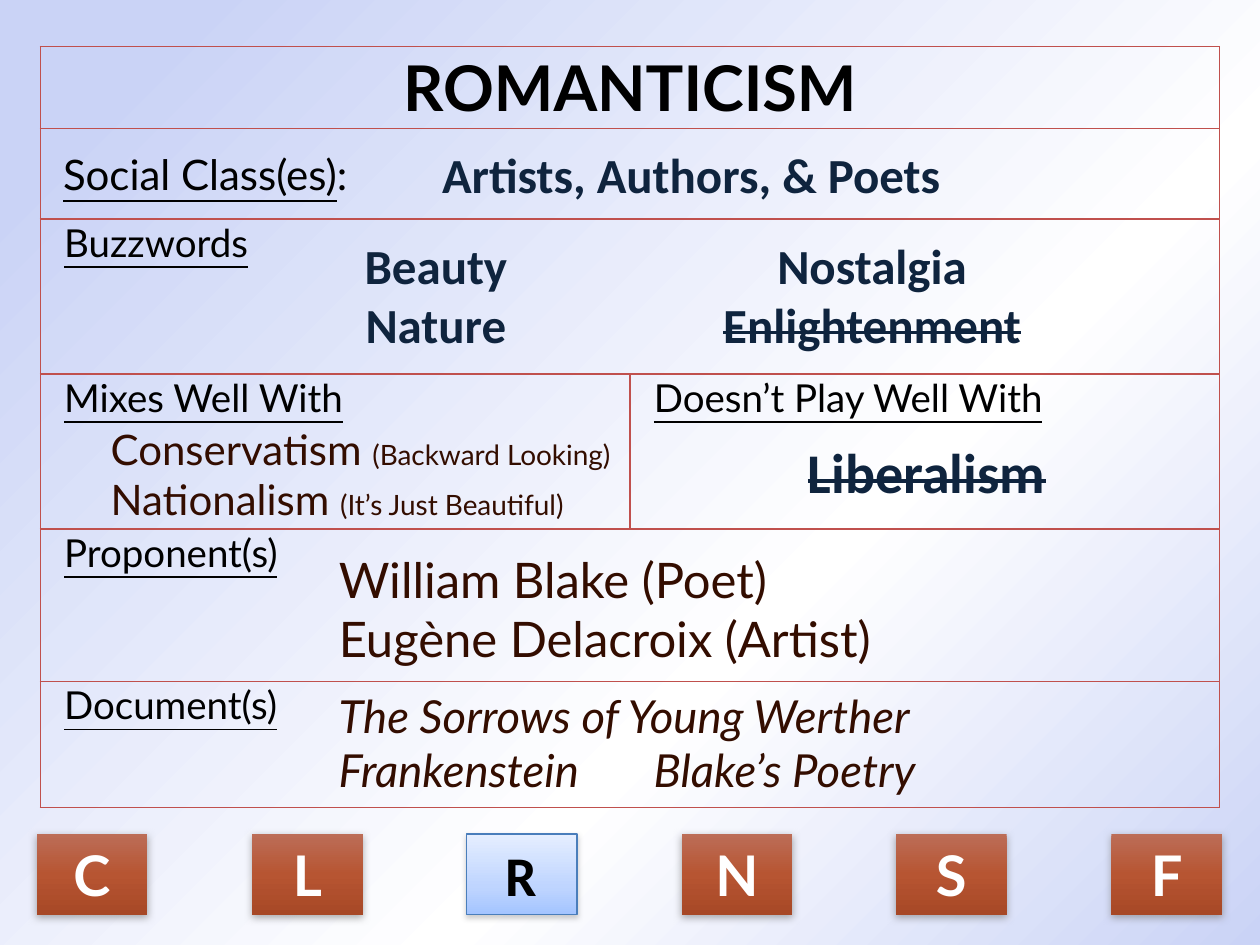
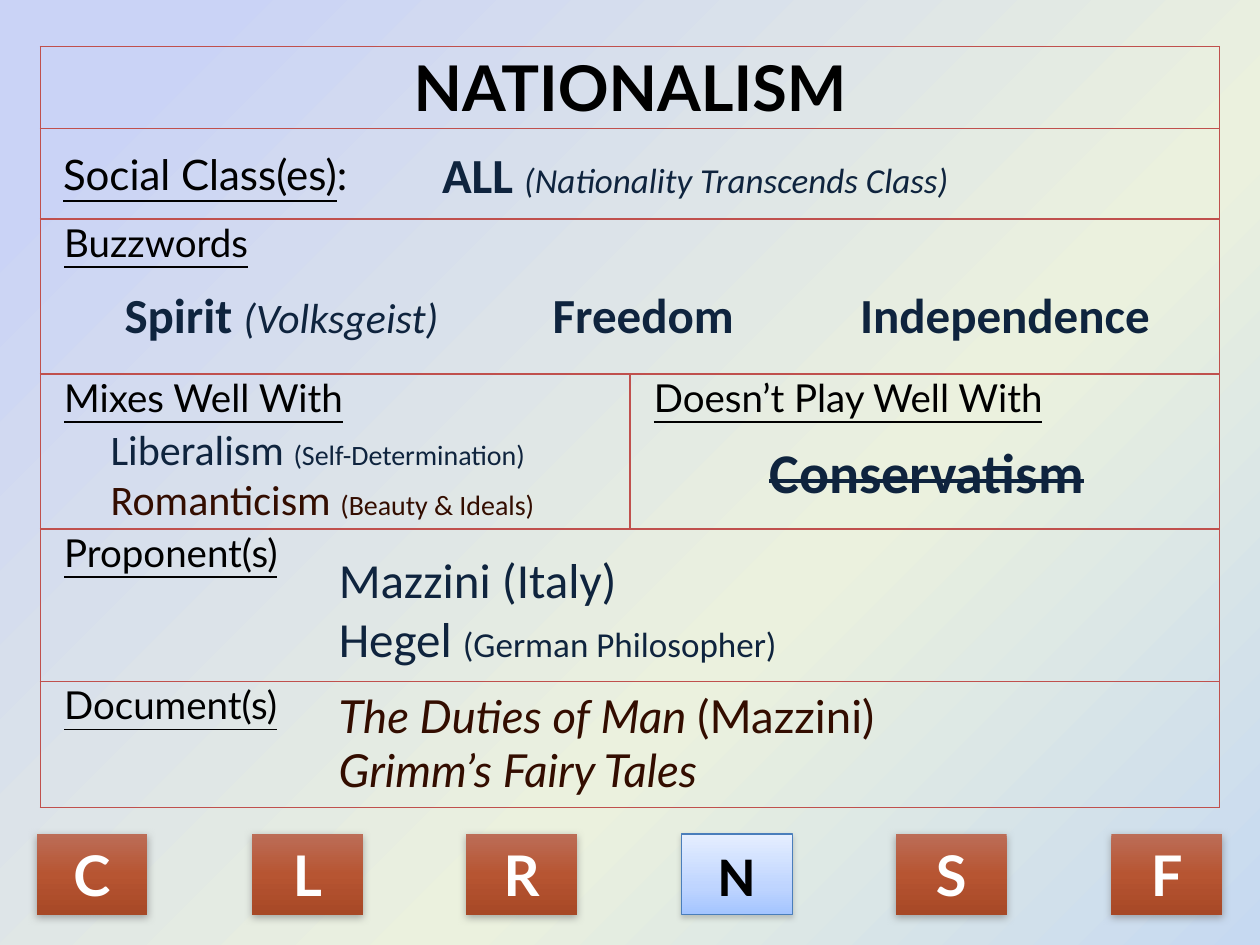
from dataclasses import dataclass, replace
from itertools import accumulate

from lxml import etree
from pptx import Presentation
from pptx.dml.color import RGBColor
from pptx.enum import shapes, text
from pptx.oxml import ns
from pptx.util import Inches, Pt


@dataclass(frozen=True)
class Style:
    size: int
    font: str = "Calibri"
    color: str = "0F243E"
    bold: bool = False
    italic: bool = False
    underline: bool = False
    strike: bool = False


@dataclass(frozen=True)
class Box:
    left: float
    top: float
    width: float
    height: float

    def inner(self, dx, dy, width, height):
        return Box(self.left + dx, self.top + dy, width, height)

    def emu(self):
        return [Inches(round(value, 2))
                for value in (self.left, self.top, self.width, self.height)]


@dataclass(frozen=True)
class ButtonLook:
    stops: tuple
    shadow: tuple  # opacity %, blur pt, distance pt
    label: Style
    line: str = ""


class Theme:
    border = "C0504D"
    shadow = "808080"
    # Labels inside the table
    title = Style(36, "Lato", "000000", bold=True)
    class_label = Style(24, "Lato", "000000", underline=True)
    class_colon = replace(class_label, underline=False)
    label = replace(class_label, size=22)
    # Answers in navy
    key = Style(28, bold=True)
    struck_key = replace(key, strike=True)
    opponent = replace(struck_key, size=32)
    navy = Style(28)
    navy_ally = Style(24)
    navy_ally_note = Style(16)
    navy_note = Style(20)
    navy_aside = Style(20, italic=True)
    key_aside = Style(24, italic=True)
    # Answers in brown
    brown = Style(28, "Lato", "330D00")
    brown_ally = replace(brown, size=24)
    brown_ally_note = replace(brown, size=16)
    work_author = replace(brown, size=26)
    work = replace(work_author, italic=True)
    # Navigation buttons
    button = ButtonLook(((0, "BC6D57"), (50, "B75532"), (100, "A74826")),
                        (63, 4.5, 1.5), Style(32, "Lato", "FFFFFF", bold=True))
    current_button = ButtonLook(((0, "E5EEFF"), (65, "BFD5FF"), (100, "A3C4FF")),
                                (38, 3.1, 1.6), Style(32, color="000000", bold=True),
                                "4A7EBB")


CARD = Box(0.32, 0.37, 9.36, 6.04)
ROW_HEIGHTS = (0.65, 0.72, 1.23, 1.23, 1.21, 1)
ROW_TOPS = (0, *accumulate(ROW_HEIGHTS))
TITLE, CLASSES, BUZZWORDS, RELATIONS, PROPONENTS, DOCUMENTS = range(6)
BUTTON_BAR = Box(0.29, 6.62, 9.41, 0.64)
BUTTON_WIDTH = 0.88
MOVEMENTS = "CLRNSF"


@dataclass(frozen=True)
class Movement:
    title: str
    letter: str
    background: tuple
    classes: list
    buzzwords: list
    buzzword_columns: int
    buzzword_box: Box  # relative to the buzzwords row
    allies: list
    opponent: str
    proponents: list
    documents: list


# Shared helpers
def add_element(parent, tag, **attributes):
    return etree.SubElement(parent, ns.qn(tag), {k: str(v) for k, v in attributes.items()})


def set_gradient(fill, owner, stops, angle):
    fill.gradient()
    gradient = owner.find(".//" + ns.qn("a:gradFill"))
    stop_list = gradient.find(ns.qn("a:gsLst"))
    for stop in list(stop_list):
        stop_list.remove(stop)
    for position, color in stops:
        stop = add_element(stop_list, "a:gs", pos=position * 1000)
        add_element(stop, "a:srgbClr", val=color)
    gradient.find(ns.qn("a:lin")).set("ang", str(angle * 60000))


def add_runs(paragraph, runs):
    for content, style in runs:
        run = paragraph.add_run()
        run.text = content
        font = run.font
        font.size, font.name = Pt(style.size), style.font
        font.color.rgb = RGBColor.from_string(style.color)
        font.bold, font.italic, font.underline = style.bold, style.italic, style.underline
        if style.strike:
            run._r.get_or_add_rPr().set("strike", "sngStrike")


def set_indent(paragraph, inches):
    paragraph._p.get_or_add_pPr().set("marL", str(Inches(inches)))


def add_text(slide, box, paragraphs, centered=False, indent=0, columns=1):
    frame = slide.shapes.add_textbox(*box.emu()).text_frame
    frame.word_wrap = True
    if columns > 1:
        frame._txBody.bodyPr.set("numCol", str(columns))
    for index, runs in enumerate(paragraphs):
        paragraph = frame.add_paragraph() if index else frame.paragraphs[0]
        paragraph.alignment = text.PP_ALIGN.CENTER if centered else text.PP_ALIGN.LEFT
        if indent:
            set_indent(paragraph, indent)
        add_runs(paragraph, runs)


# Table with the fixed labels
def format_cell(cell):
    cell.margin_left = cell.margin_right = Inches(0.06)
    cell.margin_top = cell.margin_bottom = 0
    properties = cell._tc.get_or_add_tcPr()
    for side in ("a:lnL", "a:lnR", "a:lnT", "a:lnB"):
        line = add_element(properties, side, w=Pt(1))
        add_element(add_element(line, "a:solidFill"), "a:srgbClr", val=Theme.border)
    cell.fill.background()


def add_card_table(slide, box, title):
    table = slide.shapes.add_table(len(ROW_HEIGHTS), 2, *box.emu()).table
    table.first_row = table.horz_banding = False
    for column in table.columns:
        column.width = Inches(box.width / 2)
    for row, height in zip(table.rows, ROW_HEIGHTS):
        row.height = Inches(height)
    for cell in table.iter_cells():
        format_cell(cell)
    for row in range(len(ROW_HEIGHTS)):
        if row != RELATIONS:
            table.cell(row, 0).merge(table.cell(row, 1))

    heading, classes = table.cell(TITLE, 0), table.cell(CLASSES, 0)
    heading.vertical_anchor = classes.vertical_anchor = text.MSO_ANCHOR.MIDDLE
    paragraph = heading.text_frame.paragraphs[0]
    paragraph.alignment = text.PP_ALIGN.CENTER
    add_runs(paragraph, [(title, Theme.title)])
    paragraph = classes.text_frame.paragraphs[0]
    set_indent(paragraph, 0.12)
    add_runs(paragraph, [("Social Class(es)", Theme.class_label), (":", Theme.class_colon)])

    labels = {(BUZZWORDS, 0): "Buzzwords", (RELATIONS, 0): "Mixes Well With",
              (RELATIONS, 1): "Doesn’t Play Well With",
              (PROPONENTS, 0): "Proponent(s)", (DOCUMENTS, 0): "Document(s)"}
    for position, label in labels.items():
        paragraph = table.cell(*position).text_frame.paragraphs[0]
        paragraph.space_before = Pt(3)
        set_indent(paragraph, 0.13)
        add_runs(paragraph, [(label, Theme.label)])


# Answers laid over the table rows
def add_answers(slide, card, movement):
    def place(row, dx, dy, width, height):
        return card.inner(dx, ROW_TOPS[row] + dy, width, height)

    add_text(slide, place(CLASSES, 3, 0.08, 4.6, 0.57), [movement.classes], indent=0.09)
    add_text(slide, place(RELATIONS, 0.46, 0.34, 4.24, 0.91), movement.allies)
    add_text(slide, place(RELATIONS, card.width / 2, 0.45, 4.71, 0.64),
             [[(movement.opponent, Theme.opponent)]], centered=True)
    add_text(slide, place(PROPONENTS, 2.27, 0.11, 5.68, 1.04), movement.proponents)
    add_text(slide, place(DOCUMENTS, 2.27, 0, 5.96, 0.98), movement.documents)
    words = movement.buzzword_box
    add_text(slide, place(BUZZWORDS, words.left, words.top, words.width, words.height),
             movement.buzzwords, centered=True, columns=movement.buzzword_columns)


# Row of navigation buttons
def add_button(slide, box, letter, look):
    shape = slide.shapes.add_shape(shapes.MSO_SHAPE.RECTANGLE, *box.emu())
    shape.shadow.inherit = False
    properties = shape._element.spPr
    set_gradient(shape.fill, properties, look.stops, 90)
    if look.line:
        shape.line.color.rgb = RGBColor.from_string(look.line)
        shape.line.width = Pt(0.75)
    else:
        shape.line.fill.background()
    opacity, blur, distance = look.shadow
    shadow = add_element(properties.find(ns.qn("a:effectLst")), "a:outerShdw",
                         blurRad=Pt(blur), dist=Pt(distance), dir=90 * 60000, rotWithShape=0)
    color = add_element(shadow, "a:srgbClr", val=Theme.shadow)
    add_element(color, "a:alpha", val=opacity * 1000)
    shape.text_frame.vertical_anchor = text.MSO_ANCHOR.MIDDLE
    paragraph = shape.text_frame.paragraphs[0]
    paragraph.alignment = text.PP_ALIGN.CENTER
    add_runs(paragraph, [(letter, look.label)])


def add_button_bar(slide, bar, current):
    pitch = (bar.width - BUTTON_WIDTH) / (len(MOVEMENTS) - 1)
    for index, letter in enumerate(MOVEMENTS):
        look = Theme.current_button if letter == current else Theme.button
        add_button(slide, bar.inner(index * pitch, 0, BUTTON_WIDTH, bar.height), letter, look)


def add_movement_slide(presentation, movement):
    slide = presentation.slides.add_slide(presentation.slide_layouts[6])
    set_gradient(slide.background.fill, slide._element, movement.background, 45)
    add_card_table(slide, CARD, movement.title)
    add_answers(slide, CARD, movement)
    add_button_bar(slide, BUTTON_BAR, movement.letter)


ROMANTICISM = Movement(
    title="ROMANTICISM",
    letter="R",
    background=((0, "CAD3F6"), (9, "CAD3F6"), (63, "FFFFFF"), (100, "CAD3F6")),
    classes=[("Artists, Authors, & Poets", Theme.key)],
    buzzwords=[[("Beauty", Theme.key)], [("Nature", Theme.key)],
               [("Nostalgia", Theme.key)], [("Enlightenment", Theme.struck_key)]],
    buzzword_columns=2,
    buzzword_box=Box(1.31, 0.08, 7.12, 1.1),
    allies=[[("Conservatism ", Theme.brown_ally), ("(Backward Looking)", Theme.brown_ally_note)],
            [("Nationalism ", Theme.brown_ally), ("(It’s Just Beautiful)", Theme.brown_ally_note)]],
    opponent="Liberalism",
    proponents=[[("William Blake (Poet)", Theme.brown)],
                [("Eugène Delacroix (Artist)", Theme.brown)]],
    documents=[[("The Sorrows of Young Werther", Theme.work)],
               [("Frankenstein\t\tBlake’s Poetry", Theme.work)]],
)

NATIONALISM = Movement(
    title="NATIONALISM",
    letter="N",
    background=((0, "CAD3F6"), (9, "CAD3F6"), (63, "EBF1DE"), (100, "C6D9F1")),
    classes=[("ALL ", Theme.key), ("(Nationality Transcends Class)", Theme.navy_aside)],
    buzzwords=[[("Spirit ", Theme.key), ("(Volksgeist)", Theme.key_aside)],
               [("Freedom", Theme.key)], [("Independence", Theme.key)]],
    buzzword_columns=3,
    buzzword_box=Box(0.38, 0.47, 8.81, 0.6),
    allies=[[("Liberalism ", Theme.navy_ally), ("(Self-Determination)", Theme.navy_ally_note)],
            [("Romanticism ", replace(Theme.brown_ally, font="Calibri")),
             ("(Beauty & Ideals)", replace(Theme.brown_ally_note, font="Calibri"))]],
    opponent="Conservatism",
    proponents=[[("Mazzini (Italy)", Theme.navy)],
                [("Hegel ", Theme.navy), ("(German Philosopher)", Theme.navy_note)]],
    documents=[[("The Duties of Man ", Theme.work), ("(Mazzini)", Theme.work_author)],
               [("Grimm’s Fairy Tales", Theme.work)]],
)


def main():
    presentation = Presentation()
    presentation.slide_width, presentation.slide_height = Inches(10), Inches(7.5)
    for movement in (ROMANTICISM, NATIONALISM):
        add_movement_slide(presentation, movement)
    presentation.save("out.pptx")


if __name__ == "__main__":
    main()
